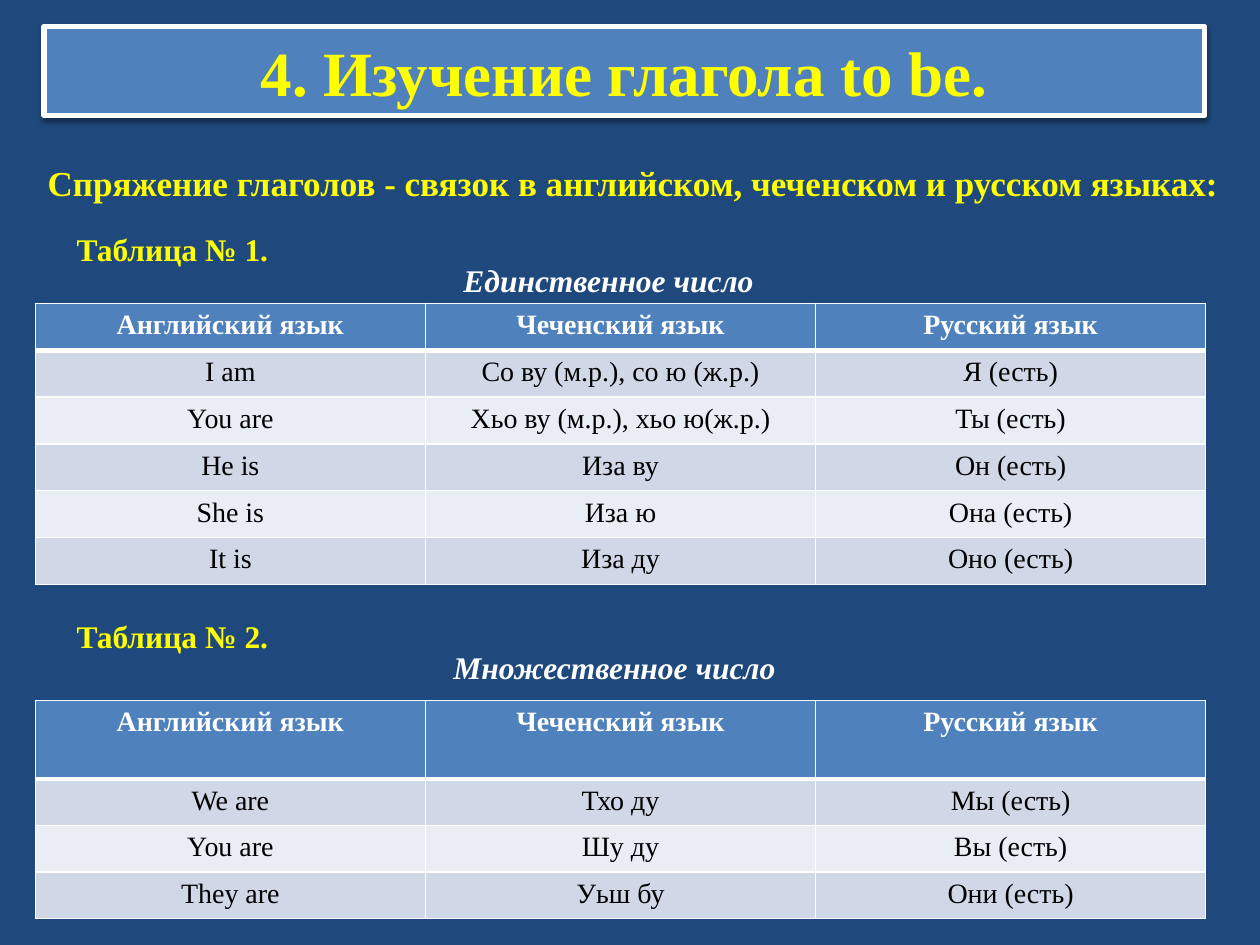
from dataclasses import dataclass

from lxml import etree
from pptx import Presentation
from pptx.dml.color import RGBColor
from pptx.enum.shapes import MSO_SHAPE
from pptx.enum.text import MSO_ANCHOR, PP_ALIGN
from pptx.oxml import parse_xml
from pptx.oxml.ns import nsdecls, qn
from pptx.util import Inches, Pt

RECTANGLE = MSO_SHAPE.RECTANGLE
MIDDLE = MSO_ANCHOR.MIDDLE
LEFT, CENTER = PP_ALIGN.LEFT, PP_ALIGN.CENTER
WIDTH, HEIGHT = Inches(10), Inches(7.5)


@dataclass(frozen=True)
class Theme:
    """Colours, font and type sizes of the slide."""
    font: str = "Times New Roman"
    background: str = "1F497D"
    accent: str = "4F81BD"
    yellow: str = "FFFF00"
    white: str = "FFFFFF"
    black: str = "000000"
    bands: tuple = ("D0D8E8", "E9EDF4")
    title: int = 36
    heading: int = 20
    label: int = 18
    cell: int = 16
    thin: int = 1
    thick: int = 3


THEME = Theme()
COLUMNS = ("Английский язык", "Чеченский язык", "Русский язык")
SINGULAR = (
    ("I am", "Со ву (м.р.), со ю (ж.р.)", "Я (есть)"),
    ("You are", "Хьо ву (м.р.), хьо ю(ж.р.)", "Ты (есть)"),
    ("He is", "Иза ву", "Он (есть)"),
    ("She is", "Иза ю", "Она (есть)"),
    ("It is", "Иза ду", "Оно (есть)"),
)
PLURAL = (
    ("We are", "Тхо ду", "Мы (есть)"),
    ("You are", "Шу ду", "Вы (есть)"),
    ("They are", "Уьш бу", "Они (есть)"),
)


def place(left, top, width, height):
    """Turn percentages of the slide into lengths."""
    sides = (WIDTH, HEIGHT, WIDTH, HEIGHT)
    return [int(side * share / 100) for side, share in zip(sides, (left, top, width, height))]


def paint(fill, color):
    """Give a fill one solid colour."""
    fill.solid()
    fill.fore_color.rgb = RGBColor.from_string(color)


def write(frame, text, color, size, align=LEFT, **extra):
    """Write one formatted paragraph in a text frame."""
    para = frame.paragraphs[0]
    para.alignment = align
    span = para.add_run()
    span.text = text
    formats = {"name": THEME.font, "size": Pt(size), "bold": True, **extra}
    for name, value in formats.items():
        setattr(span.font, name, value)
    span.font.color.rgb = RGBColor.from_string(color)


def add_title(page, text, area):
    """Add the framed title bar with its soft shadow."""
    box = page.shapes.add_shape(RECTANGLE, *place(*area))
    paint(box.fill, THEME.accent)
    paint(box.line.fill, THEME.white)
    box.line.width = Pt(THEME.thick)
    box.shadow.inherit = False
    effects = box._element.spPr.find(qn("a:effectLst"))
    effects.append(parse_xml(
        f'<a:outerShdw {nsdecls("a")} blurRad="{Pt(3.1)}" dist="{Pt(1.6)}" dir="5400000" '
        f'rotWithShape="0"><a:srgbClr val="{THEME.black}"><a:alpha val="38000"/>'
        '</a:srgbClr></a:outerShdw>'))
    box.text_frame.vertical_anchor = MIDDLE
    write(box.text_frame, text, THEME.yellow, THEME.title, CENTER)


def add_label(page, text, area, color, size, **extra):
    """Add a one-line caption."""
    box = page.shapes.add_textbox(*place(*area))
    box.text_frame.word_wrap = False
    write(box.text_frame, text, color, size, **extra)


def add_borders(cell, top, bottom):
    """Draw white lines on the four sides of a cell."""
    properties = cell._tc.get_or_add_tcPr()
    widths = {"lnL": THEME.thin, "lnR": THEME.thin, "lnT": top, "lnB": bottom}
    for index, (side, width) in enumerate(widths.items()):
        line = etree.Element(qn(f"a:{side}"), w=str(Pt(width)))
        solid = etree.SubElement(line, qn("a:solidFill"))
        etree.SubElement(solid, qn("a:srgbClr"), val=THEME.white)
        properties.insert(index, line)


def add_verb_table(page, rows, area, header_share):
    """Add a conjugation table with a header row and banded body rows."""
    left, top, width, height = place(*area)
    table = page.shapes.add_table(len(rows) + 1, len(COLUMNS), left, top, width, height).table
    header_height = int(height * header_share)
    for index, row in enumerate(table.rows):
        row.height = (height - header_height) // len(rows) if index else header_height
    for row_index, texts in enumerate((COLUMNS, *rows)):
        header = row_index == 0
        fill = THEME.accent if header else THEME.bands[(row_index - 1) % 2]
        color = THEME.white if header else THEME.black
        upper = THEME.thick if row_index == 1 else THEME.thin
        lower = THEME.thick if header else THEME.thin
        for column_index, text in enumerate(texts):
            cell = table.cell(row_index, column_index)
            paint(cell.fill, fill)
            add_borders(cell, upper, lower)
            write(cell.text_frame, text, color, THEME.cell, CENTER, bold=header)


def main():
    """Build the slide and save it."""
    deck = Presentation()
    deck.slide_width, deck.slide_height = WIDTH, HEIGHT
    page = deck.slides.add_slide(deck.slide_layouts[6])
    paint(page.background.fill, THEME.background)
    add_title(page, "4. Изучение глагола to be.", (3.5, 2.8, 92.1, 9.47))
    add_label(page, "Спряжение глаголов - связок в английском, чеченском и русском языках:",
              (2.8, 16.4, 96.1, 5.87), THEME.yellow, THEME.heading)
    for text, top in (("Таблица № 1.", 23.73), ("Таблица № 2.", 64.67)):
        add_label(page, text, (5.1, top, 17.4, 5.33), THEME.yellow, THEME.label)
    for text, left, top, width in (("Единственное число", 35.8, 26.93, 25.3),
                                   ("Множественное число", 35, 67.87, 27.9)):
        add_label(page, text, (left, top, width, 5.33), THEME.white, THEME.label, italic=True)
    add_verb_table(page, SINGULAR, (2.8, 32.13, 92.9, 29.73), 1 / 6)
    add_verb_table(page, PLURAL, (2.8, 74.13, 92.9, 23.07), 0.36)
    deck.save("out.pptx")


if __name__ == "__main__":
    main()
